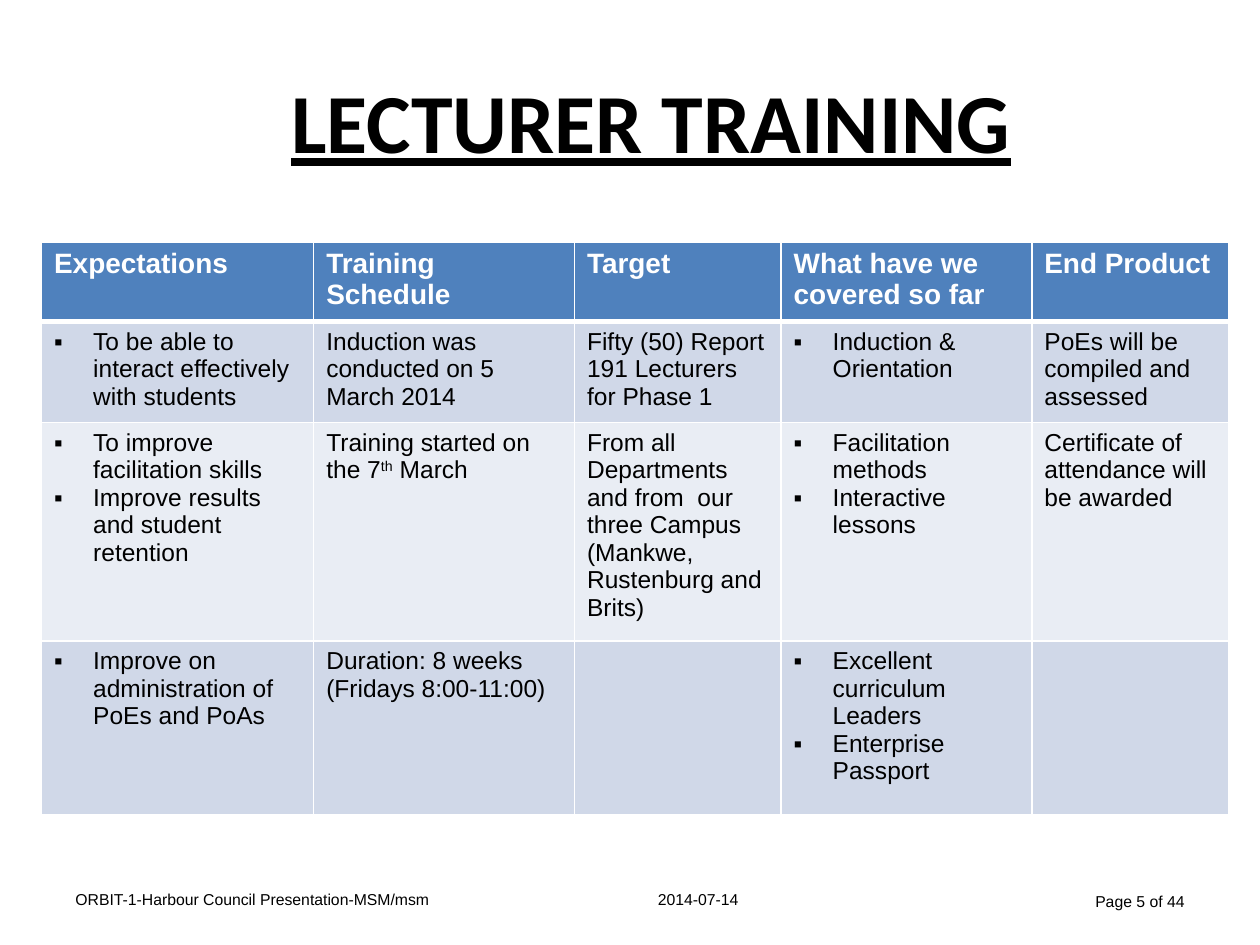
from lxml.etree import SubElement
from pptx import Presentation
from pptx.dml.color import RGBColor
from pptx.enum.text import MSO_ANCHOR, PP_ALIGN
from pptx.oxml import parse_xml
from pptx.oxml.ns import nsdecls, qn
from pptx.util import Inches, Pt

COLORS = {
    "text": "000000",
    "white": "FFFFFF",
    "header": "4F81BD",
    "odd": "D0D8E8",
    "even": "E9EDF4",
}
COLUMN_WIDTHS = [2.16, 2.07, 1.64, 1.99, 1.56]
ROW_HEIGHTS = [0.59, 0.75, 1.63, 1.38]
BULLET_INDENT = Inches(0.31)

HEADINGS = ["Expectations", "Training Schedule", "Target",
            "What have we covered so far", "End Product"]
# Lists become bullets; tuples alternate normal and superscript runs.
PROGRAMME = [
    [["To be able to interact effectively with students"],
     "Induction was conducted on 5 March 2014",
     "Fifty (50) Report 191 Lecturers for Phase 1",
     ["Induction & Orientation"],
     "PoEs will be compiled and assessed"],
    [["To improve facilitation skills", "Improve results and student retention"],
     ("Training started on the 7", "th", " March"),
     "From all Departments and from  our three Campus (Mankwe, Rustenburg and Brits)",
     ["Facilitation methods", "Interactive lessons"],
     "Certificate of attendance will be awarded"],
    [["Improve on administration of PoEs and PoAs"],
     "Duration: 8 weeks (Fridays 8:00-11:00)",
     "",
     ["Excellent curriculum Leaders", "Enterprise Passport"],
     ""],
]
FOOTERS = [
    ("ORBIT-1-Harbour Council Presentation-MSM/msm", 0.5, 3.75, 0.38, PP_ALIGN.LEFT),
    ("2014-07-14", 4.5, 2.08, 0.38, PP_ALIGN.CENTER),
    ("Page 5 of 44", 7.17, 2.33, 0.4, PP_ALIGN.RIGHT),
]


def rgb(name):
    return RGBColor.from_string(COLORS[name])


def style_font(font, color="text", **values):
    for attribute, value in values.items():
        setattr(font, attribute, value)
    font.color.rgb = rgb(color)


def add_label(slide, text, box, align, **font_values):
    frame = slide.shapes.add_textbox(*map(Inches, box)).text_frame
    frame.word_wrap = True
    frame.vertical_anchor = MSO_ANCHOR.MIDDLE
    paragraph = frame.paragraphs[0]
    paragraph.alignment = align
    run = paragraph.add_run()
    run.text = text
    style_font(run.font, **font_values)


def add_bullet(paragraph):
    properties = paragraph._p.get_or_add_pPr()
    properties.set("marL", str(BULLET_INDENT))
    properties.set("indent", str(-BULLET_INDENT))
    SubElement(properties, qn("a:buFont")).set("typeface", "Arial")
    SubElement(properties, qn("a:buChar")).set("char", "▪")


def add_borders(cell, bottom):
    properties = cell._tc.get_or_add_tcPr()
    sides = {"lnL": 1, "lnR": 1, "lnT": 1, "lnB": bottom}
    for index, (side, width) in enumerate(sides.items()):
        properties.insert(index, parse_xml(
            f'<a:{side} {nsdecls("a")} w="{Pt(width)}"><a:solidFill>'
            f'<a:srgbClr val="{COLORS["white"]}"/></a:solidFill></a:{side}>'))


def fill_cell(cell, content, fill, bottom=1, **font_values):
    cell.fill.solid()
    cell.fill.fore_color.rgb = rgb(fill)
    add_borders(cell, bottom)
    bulleted = isinstance(content, list)
    frame = cell.text_frame
    for index, item in enumerate(content if bulleted else [content]):
        paragraph = frame.add_paragraph() if index else frame.paragraphs[0]
        if bulleted:
            add_bullet(paragraph)
        style_font(paragraph.font, **font_values)
        parts = item if isinstance(item, tuple) else (item,)
        for position, part in enumerate(filter(None, parts)):
            run = paragraph.add_run()
            run.text = part
            style_font(run.font, **font_values)
            if position % 2:
                run._r.get_or_add_rPr().set("baseline", "30000")


def add_programme_table(slide):
    table = slide.shapes.add_table(
        len(ROW_HEIGHTS), len(COLUMN_WIDTHS), Inches(0.33), Inches(1.92),
        Inches(sum(COLUMN_WIDTHS)), Inches(sum(ROW_HEIGHTS))).table
    for column, width in zip(table.columns, COLUMN_WIDTHS):
        column.width = Inches(width)
    for row, height in zip(table.rows, ROW_HEIGHTS):
        row.height = Inches(height)
    for column, heading in enumerate(HEADINGS):
        fill_cell(table.cell(0, column), heading, "header", bottom=3,
                  color="white", name="Arial", size=Pt(16), bold=True)
    for row, entries in enumerate(PROGRAMME, start=1):
        for column, content in enumerate(entries):
            fill_cell(table.cell(row, column), content, "odd" if row % 2 else "even",
                      bottom=1, name="Arial", size=Pt(14), bold=False)


def main():
    presentation = Presentation()
    presentation.slide_width = Inches(10)
    presentation.slide_height = Inches(7.5)
    slide = presentation.slides.add_slide(presentation.slide_layouts[6])
    add_label(slide, "LECTURER TRAINING", (0.67, 0.33, 9, 1.25), PP_ALIGN.CENTER,
              name="Calibri", size=Pt(48), bold=True, underline=True)
    add_programme_table(slide)
    for text, left, width, height, align in FOOTERS:
        add_label(slide, text, (left, 6.95, width, height), align,
                  name="Arial", size=Pt(9))
    presentation.save("out.pptx")


if __name__ == "__main__":
    main()
